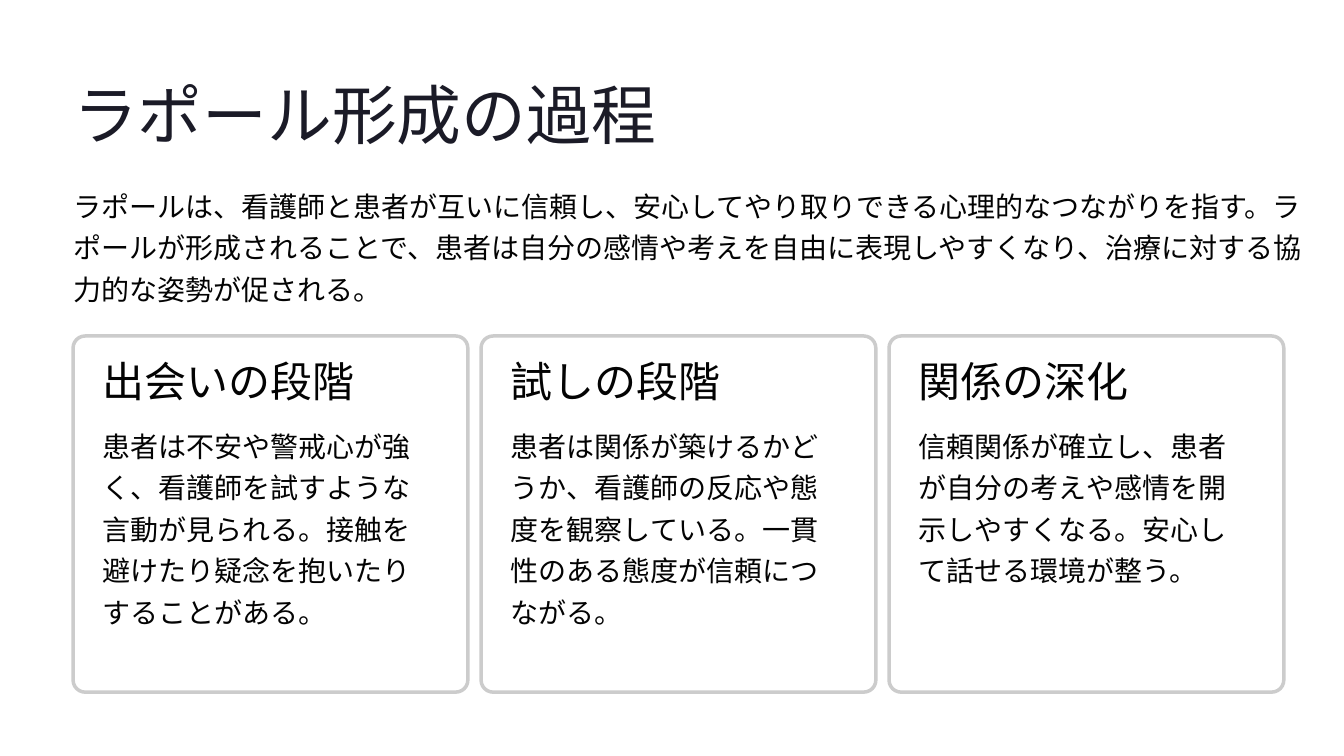
from lxml.etree import SubElement
from pptx import Presentation
from pptx.dml.color import RGBColor
from pptx.enum.shapes import MSO_SHAPE as Preset
from pptx.enum.text import MSO_AUTO_SIZE as AutoSize
from pptx.oxml.ns import qn
from pptx.util import Inches, Pt

TITLE_COLOR = RGBColor(0x1B, 0x1B, 0x27)
TEXT_COLOR = RGBColor(0x03, 0x03, 0x03)
CARD_COLOR = RGBColor(0xFF, 0xFF, 0xFF)
BORDER_COLOR = RGBColor(0xCC, 0xCC, 0xCC)

HEADING_FONT = "Inter"
BODY_FONT = "Roboto"
BODY_SIZE, BODY_LEADING = 24, 35.5

MARGIN = 0.87
CARD_TOP, CARD_WIDTH, CARD_HEIGHT = 4, 4.7, 4.24
COLUMN_STEP = 4.857
PADDING = 0.355
BODY_OFFSET = 1.02
CARD_TEXT_WIDTH = 3.97

TITLE = "ラポール形成の過程"
INTRODUCTION = (
    "ラポールは、看護師と患者が互いに信頼し、安心してやり取りできる心理的なつながりを指す。"
    "ラポールが形成されることで、患者は自分の感情や考えを自由に表現しやすくなり、"
    "治療に対する協力的な姿勢が促される。"
)
STAGES = [
    ("出会いの段階",
     "患者は不安や警戒心が強く、看護師を試すような言動が見られる。"
     "接触を避けたり疑念を抱いたりすることがある。"),
    ("試しの段階",
     "患者は関係が築けるかどうか、看護師の反応や態度を観察している。"
     "一貫性のある態度が信頼につながる。"),
    ("関係の深化",
     "信頼関係が確立し、患者が自分の考えや感情を開示しやすくなる。"
     "安心して話せる環境が整う。"),
]


def add_text(slide, box, text, font_name, size, leading, color=TEXT_COLOR, wrap=True):
    frame = slide.shapes.add_textbox(*map(Inches, box)).text_frame
    frame.word_wrap = wrap
    frame.auto_size = AutoSize.NONE
    frame.margin_left = frame.margin_right = 0
    frame.margin_top = frame.margin_bottom = 0
    paragraph = frame.paragraphs[0]
    paragraph.line_spacing = Pt(leading)
    run = paragraph.add_run()
    run.text = text
    run.font.name = font_name
    run.font.size = Pt(size)
    run.font.color.rgb = color


def add_card(slide, left):
    box = (left, CARD_TOP, CARD_WIDTH, CARD_HEIGHT)
    card = slide.shapes.add_shape(Preset.ROUNDED_RECTANGLE, *map(Inches, box))
    card.adjustments[0] = 0.034
    card.shadow.inherit = False
    card.fill.solid()
    card.fill.fore_color.rgb = CARD_COLOR
    fill_color = card.element.spPr.find(qn("a:solidFill")).find(qn("a:srgbClr"))
    SubElement(fill_color, qn("a:alpha"), val="95000")
    card.line.color.rgb = BORDER_COLOR
    card.line.width = Pt(3)


def add_stage(slide, column, heading, body):
    left = MARGIN + column * COLUMN_STEP
    text_left, text_top = left + PADDING, CARD_TOP + PADDING
    add_card(slide, left)
    add_text(slide, (text_left, text_top, CARD_TEXT_WIDTH, 0.53),
             heading, HEADING_FONT, 36, 34.5, wrap=False)
    add_text(slide, (text_left, CARD_TOP + BODY_OFFSET, CARD_TEXT_WIDTH, 2.73),
             body, BODY_FONT, BODY_SIZE, BODY_LEADING)


def main():
    presentation = Presentation()
    presentation.slide_width = Inches(16)
    presentation.slide_height = Inches(9)
    slide = presentation.slides.add_slide(presentation.slide_layouts[6])
    add_text(slide, (MARGIN, 0.85, 7.76, 0.97),
             TITLE, HEADING_FONT, 55.5, 69.5, TITLE_COLOR, wrap=False)
    add_text(slide, (MARGIN, 2.16, 14.75, 1.64),
             INTRODUCTION, BODY_FONT, BODY_SIZE, BODY_LEADING)
    for column, (heading, body) in enumerate(STAGES):
        add_stage(slide, column, heading, body)
    presentation.save("out.pptx")


if __name__ == "__main__":
    main()
